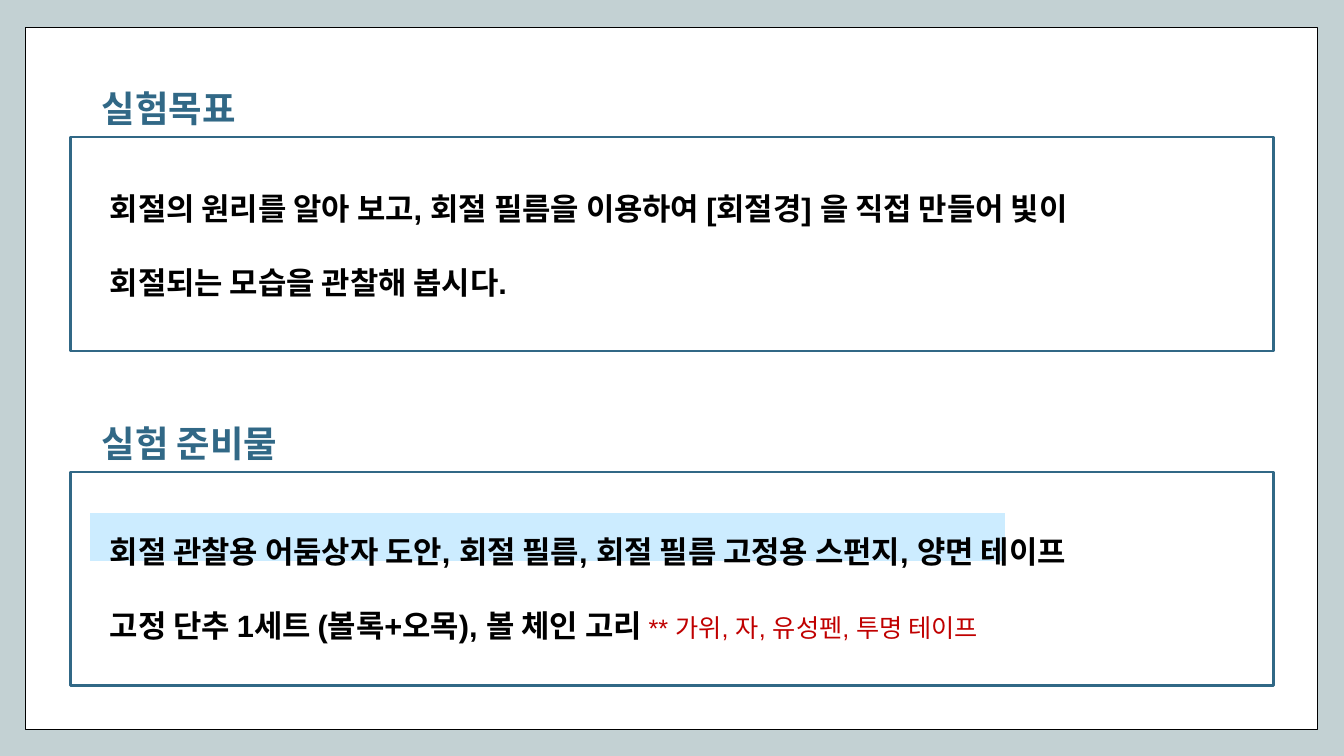
from dataclasses import dataclass

from pptx import Presentation
from pptx.dml.color import RGBColor
from pptx.enum.shapes import MSO_SHAPE
from pptx.enum.text import MSO_ANCHOR, PP_ALIGN
from pptx.slide import Slide
from pptx.text.text import Font
from pptx.util import Inches, Pt

SLIDE_WIDTH = Inches(13.33)
SLIDE_HEIGHT = Inches(7.5)
TEAL = "316886"
BLACK = "000000"
WHITE = "FFFFFF"
RED = "C00000"


@dataclass(frozen=True)
class Area:
    """Left, top, width and height in percent of the slide."""
    left: float
    top: float
    width: float
    height: float

    def lengths(self) -> tuple[int, int, int, int]:
        return (
            int(SLIDE_WIDTH * self.left / 100),
            int(SLIDE_HEIGHT * self.top / 100),
            int(SLIDE_WIDTH * self.width / 100),
            int(SLIDE_HEIGHT * self.height / 100),
        )


@dataclass(frozen=True)
class Panel:
    area: Area
    fill: str
    line: str
    line_width: float


@dataclass(frozen=True)
class Section:
    heading: str
    heading_area: Area
    frame_top: float
    body_area: Area
    lines: tuple[str, ...]
    extra: str = ""


PAPER = Panel(Area(1.88, 3.6, 96.17, 92.93), WHITE, BLACK, 1)
HIGHLIGHT = Panel(Area(6.6, 67.73, 68.27, 6.67), "CCECFF", WHITE, 1.5)

SECTIONS = (
    Section(
        "실험목표", Area(6.83, 10, 14.7, 6.4), 18.13,
        Area(7.43, 19.6, 82.97, 19.47),
        (
            "회절의 원리를 알아 보고, 회절 필름을 이용하여 [회절경] 을 직접 만들어 빛이",
            "회절되는 모습을 관찰해 봅시다.",
        ),
    ),
    Section(
        "실험 준비물", Area(6.83, 54.4, 17.25, 6.4), 62.4,
        Area(7.43, 64.93, 86.5, 19.47),
        (
            "회절 관찰용 어둠상자 도안, 회절 필름, 회절 필름 고정용 스펀지, 양면 테이프",
            "고정 단추 1세트 (볼록+오목), 볼 체인 고리 ",
        ),
        "** 가위, 자, 유성펜, 투명 테이프",
    ),
)


def color(code: str) -> RGBColor:
    return RGBColor.from_string(code)


def style(font: Font, name: str, size: float, code: str, bold: bool) -> None:
    font.name = name
    font.size = Pt(size)
    font.bold = bold
    font.color.rgb = color(code)


def draw_panel(slide: Slide, panel: Panel) -> None:
    box = slide.shapes.add_shape(MSO_SHAPE.RECTANGLE, *panel.area.lengths())
    box.shadow.inherit = False
    box.fill.solid()
    box.fill.fore_color.rgb = color(panel.fill)
    box.line.color.rgb = color(panel.line)
    box.line.width = Pt(panel.line_width)


def draw_heading(slide: Slide, section: Section) -> None:
    frame = slide.shapes.add_textbox(*section.heading_area.lengths()).text_frame
    frame.word_wrap = True
    frame.vertical_anchor = MSO_ANCHOR.TOP
    frame.margin_left = frame.margin_right = Inches(0.1)
    frame.margin_top = frame.margin_bottom = Inches(0.1)
    frame.text = section.heading
    style(frame.paragraphs[0].font, "Calibri", 26, TEAL, True)


def draw_body(slide: Slide, section: Section) -> None:
    frame = slide.shapes.add_textbox(*section.body_area.lengths()).text_frame
    frame.word_wrap = True
    frame.text = "\n".join(section.lines)
    for paragraph in frame.paragraphs:
        paragraph.alignment = PP_ALIGN.LEFT
        paragraph.line_spacing = 2.0
        style(paragraph.font, "Arial", 22, BLACK, True)
    if section.extra:
        tools = frame.paragraphs[-1].add_run()
        tools.text = section.extra
        style(tools.font, "Arial", 18, RED, False)


def main() -> None:
    deck = Presentation()
    deck.slide_width = SLIDE_WIDTH
    deck.slide_height = SLIDE_HEIGHT
    slide = deck.slides.add_slide(deck.slide_layouts[6])
    slide.background.fill.solid()
    slide.background.fill.fore_color.rgb = color("C3D1D3")

    draw_panel(slide, PAPER)
    for section in SECTIONS:
        draw_heading(slide, section)
    for section in SECTIONS:
        area = Area(5.25, section.frame_top, 89.5, 28.27)
        draw_panel(slide, Panel(area, WHITE, TEAL, 1.75))
    draw_panel(slide, HIGHLIGHT)
    for section in reversed(SECTIONS):
        draw_body(slide, section)

    deck.save("out.pptx")


if __name__ == "__main__":
    main()
